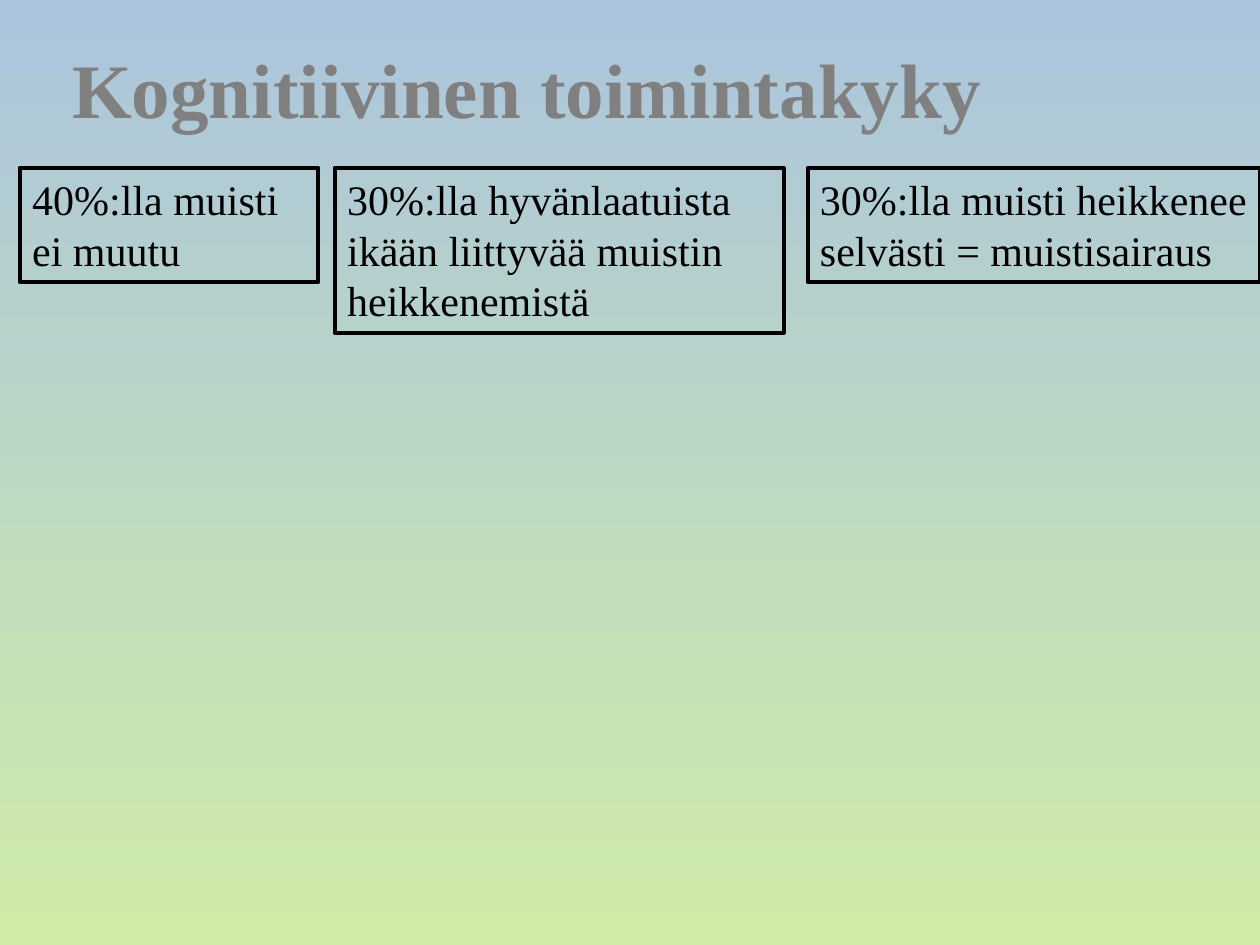
from pptx import Presentation
from pptx.dml.color import RGBColor
from pptx.enum.shapes import MSO_SHAPE as Shape
from pptx.enum.text import MSO_ANCHOR as Anchor, MSO_AUTO_SIZE as AutoSize, PP_ALIGN as Align
from pptx.util import Cm, Pt

BLUE = RGBColor(0xAB, 0xC4, 0xDD)
GREEN = RGBColor(0xCF, 0xEC, 0xA8)
GRAY = RGBColor(0x80, 0x80, 0x80)
BLACK = RGBColor(0, 0, 0)
FONT = "Times New Roman"
BOX_TOP = 3.38

# Left, width and height in cm, wrapping, lines of text
MEMORY_GROUPS = [
    (0.4, 6.02, 2.31, False, ["40%:lla muisti", "ei muutu"]),
    (6.75, 9.05, 3.33, False,
     ["30%:lla hyvänlaatuista", "ikään liittyvää muistin", "heikkenemistä"]),
    (16.28, 9.12, 2.31, True, ["30%:lla muisti heikkenee selvästi = muistisairaus"]),
]


def set_background(slide):
    fill = slide.background.fill
    fill.gradient()
    fill.gradient_angle = 270  # counter-clockwise: runs from top to bottom
    for stop, color, position in zip(fill.gradient_stops, (BLUE, GREEN), (0, 1)):
        stop.color.rgb = color
        stop.position = position


def add_text(paragraph, text, size, color, bold=False):
    paragraph.alignment = Align.LEFT
    run = paragraph.add_run()
    run.text = text
    font = run.font
    font.name, font.size, font.bold = FONT, Pt(size), bold
    font.color.rgb = color


def set_title(slide, text):
    title = slide.shapes.title
    title.left, title.top = Cm(1.2), Cm(0.4)
    title.width, title.height = Cm(22.86), Cm(2.42)
    frame = title.text_frame
    frame.vertical_anchor = Anchor.BOTTOM
    frame.auto_size = AutoSize.NONE
    add_text(frame.paragraphs[0], text, 44, GRAY, bold=True)


def add_box(slide, left, width, height, wrap, lines):
    box = slide.shapes.add_shape(
        Shape.RECTANGLE, Cm(left), Cm(BOX_TOP), Cm(width), Cm(height))
    box.shadow.inherit = False
    box.fill.background()
    box.line.color.rgb = BLACK
    box.line.width = Pt(2.25)
    frame = box.text_frame
    frame.word_wrap = wrap
    frame.auto_size = AutoSize.SHAPE_TO_FIT_TEXT
    frame.vertical_anchor = Anchor.TOP
    for index, line in enumerate(lines):
        paragraph = frame.add_paragraph() if index else frame.paragraphs[0]
        add_text(paragraph, line, 24, BLACK)


def main():
    presentation = Presentation()
    presentation.slide_width, presentation.slide_height = Cm(25.4), Cm(19.05)
    slide = presentation.slides.add_slide(presentation.slide_layouts[5])  # title only
    set_background(slide)
    set_title(slide, "Kognitiivinen toimintakyky")
    # Share of people by change in memory
    for group in MEMORY_GROUPS:
        add_box(slide, *group)
    presentation.save("out.pptx")


if __name__ == "__main__":
    main()
